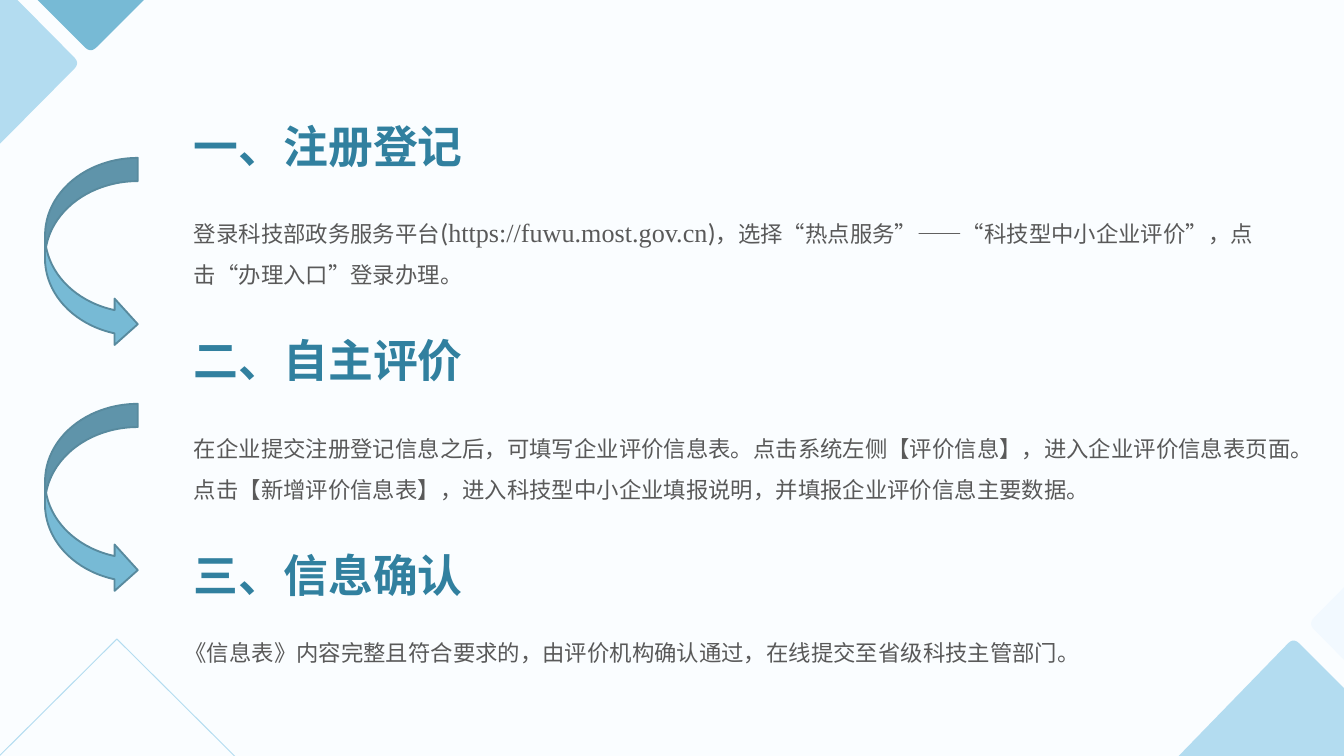
from dataclasses import dataclass
from math import dist

from lxml.etree import SubElement
from pptx import Presentation
from pptx.dml.color import RGBColor
from pptx.enum.lang import MSO_LANGUAGE_ID
from pptx.enum.shapes import MSO_SHAPE
from pptx.enum.text import MSO_AUTO_SIZE
from pptx.oxml.ns import qn
from pptx.util import Pt

PX = 4572  # EMU per px, 200 px to the inch
WIDTH, HEIGHT = 2000, 1125


@dataclass(frozen=True)
class Theme:
    background: str = "FAFDFF"
    pale: str = "F2F9FF"
    light: str = "B3DCF0"
    accent: str = "77BAD5"
    accent_edge: str = "588A9E"
    heading: str = "31809F"
    body: str = "595959"
    heading_size: int = 24
    body_size: int = 12
    address_size: int = 14
    cjk_font: str = "Noto Sans CJK SC"
    latin_font: str = "Calibri"
    address_font: str = "Times New Roman"


class SlideBuilder:
    def __init__(self, slide, theme):
        self.slide = slide
        self.theme = theme
        background = slide.background.fill
        background.solid()
        background.fore_color.rgb = RGBColor.from_string(theme.background)

    def _paint(self, shape, fill=None, line=None, line_width=1):
        shape.shadow.inherit = False
        if fill:
            shape.fill.solid()
            shape.fill.fore_color.rgb = RGBColor.from_string(fill)
        else:
            shape.fill.background()
        if line:
            shape.line.color.rgb = RGBColor.from_string(line)
            shape.line.width = Pt(line_width)
        else:
            shape.line.fill.background()

    def preset(self, kind, box, **paint):
        shape = self.slide.shapes.add_shape(kind, *(v * PX for v in box))
        self._paint(shape, **paint)

    def corner_tile(self, before, tip, after, edge, fill, radius=12, steps=8):
        """Draw a polygon whose tip is rounded by a quadratic curve."""
        def toward(end):
            share = radius / dist(tip, end)
            return [t + (e - t) * share for t, e in zip(tip, end)]

        start, stop = toward(before), toward(after)
        curve = []
        for i in range(steps + 1):
            t = i / steps
            curve.append([(1 - t) ** 2 * a + 2 * t * (1 - t) * b + t * t * c
                          for a, b, c in zip(start, tip, stop)])
        first, *rest = [[round(v * PX) for v in point]
                        for point in [before, *curve, after, *edge]]
        builder = self.slide.shapes.build_freeform(*first)
        builder.add_line_segments(rest)
        self._paint(builder.convert_to_shape(), fill=fill)

    def text(self, box, runs, color, wrap=True, line_spacing=None):
        frame = self.slide.shapes.add_textbox(*(v * PX for v in box)).text_frame
        frame.word_wrap = wrap
        frame.auto_size = MSO_AUTO_SIZE.SHAPE_TO_FIT_TEXT
        paragraph = frame.paragraphs[0]
        paragraph.line_spacing = line_spacing
        for wording, style in runs:
            run = paragraph.add_run()
            run.text = wording
            for name, value in style.items():
                setattr(run.font, name, value)
            run.font.language_id = MSO_LANGUAGE_ID.SIMPLIFIED_CHINESE
            run.font.color.rgb = RGBColor.from_string(color)
            # East Asian typeface
            SubElement(run.font._element, qn("a:ea")).set("typeface", self.theme.cjk_font)

    def heading(self, box, wording):
        style = {"size": Pt(self.theme.heading_size), "name": self.theme.cjk_font, "bold": True}
        self.text(box, [(wording, style)], self.theme.heading, wrap=False)

    def body(self, box, runs):
        self.text(box, runs, self.theme.body, line_spacing=1.5)


def main():
    theme = Theme()
    prs = Presentation()
    prs.slide_width, prs.slide_height = WIDTH * PX, HEIGHT * PX
    page = SlideBuilder(prs.slides.add_slide(prs.slide_layouts[6]), theme)

    # Corner decoration
    page.corner_tile((26, 0), (119, 94), (0, 214), [(0, 0)], theme.light)
    page.preset(MSO_SHAPE.DIAMOND, (-4, 951, 356, 354), line=theme.light, line_width=0.5)
    page.corner_tile((214, 0), (135, 79), (56, 0), [], theme.accent)
    page.corner_tile((WIDTH, 982), (1947, 928), (WIDTH, 874), [], theme.pale)
    page.corner_tile((1754, HEIGHT), (1925, 949), (WIDTH, 1024), [(WIDTH, HEIGHT)], theme.light)

    # Procedure steps
    plain = {"size": Pt(theme.body_size), "name": theme.latin_font}
    bracket = {**plain, "size": Pt(theme.address_size)}
    address = {**bracket, "name": theme.address_font}
    steps = [
        ("一、注册登记", (269, 289, 1700, 152), [
            ("登录科技部政务服务平台", plain),
            ("(", bracket),
            ("https://fuwu.most.gov.cn", address),
            (")", bracket),
            ("，选择“热点服务”——“科技型中小企业评价”，点击“办理入口”登录办理。", plain),
        ]),
        ("二、自主评价", (269, 618, 1684, 142), [
            ("在企业提交注册登记信息之后，可填写企业评价信息表。"
             "点击系统左侧【评价信息】，进入企业评价信息表页面。"
             "点击【新增评价信息表】，进入科技型中小企业填报说明，"
             "并填报企业评价信息主要数据。", plain),
        ]),
        ("三、信息确认", (255, 921, 1684, 80), [
            ("《信息表》内容完整且符合要求的，由评价机构确认通过，"
             "在线提交至省级科技主管部门。", plain),
        ]),
    ]
    heading_top, heading_pitch = 167, 319
    for i, (heading, body_box, runs) in enumerate(steps):
        page.heading((269, heading_top + i * heading_pitch, 442, 100), heading)
        page.body(body_box, runs)

    # Arrows from each step to the next
    arrow_top, arrow_pitch = 235, 366
    for i in range(len(steps) - 1):
        page.preset(MSO_SHAPE.CURVED_RIGHT_ARROW, (67, arrow_top + i * arrow_pitch, 138, 282),
                    fill=theme.accent, line=theme.accent_edge)

    prs.save("out.pptx")


if __name__ == "__main__":
    main()
